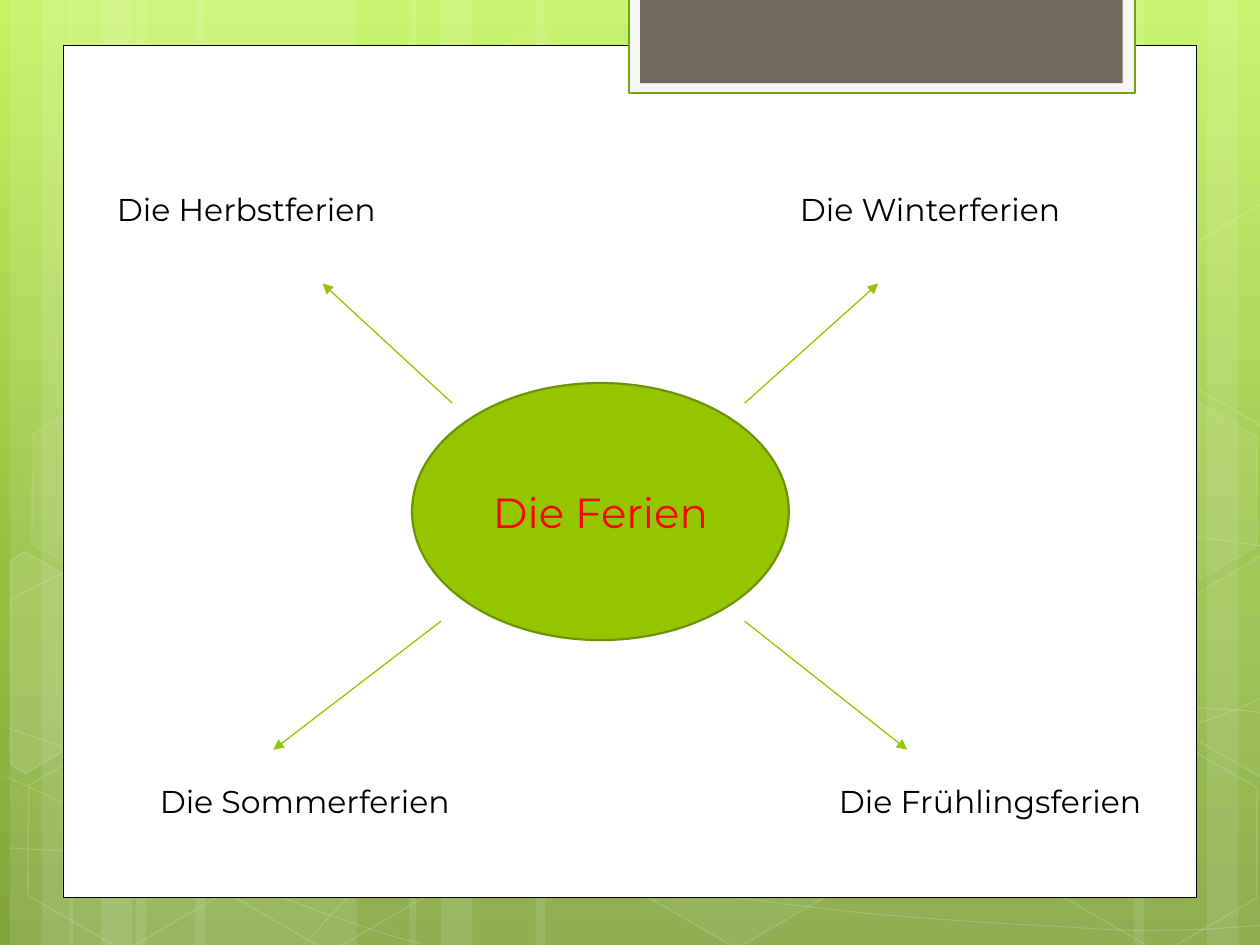
from copy import deepcopy
from pptx import Presentation
from pptx.dml.color import RGBColor
from pptx.enum.shapes import MSO_CONNECTOR, MSO_SHAPE
from pptx.enum.text import MSO_ANCHOR, MSO_AUTO_SIZE, PP_ALIGN
from pptx.oxml.ns import qn
from pptx.util import Inches, Pt
from lxml.etree import SubElement

WIDE, HIGH = Inches(10), Inches(7.5)
COL, ROW = WIDE / 10, HIGH / 7.5
FONT, GREEN, WHITE = "Montserrat", "94C600", "FFFFFF"

SKY = [("C3F35F", 0), ("93BF3F", 62), ("81A53E", 100)]
BANDS = [(1.08, 1.75), (0.08, 0.5), (0.33, 0.83), (1.55, 1.75), (0.55, 0.5),
         (0.8, 0.83), (7.33, 1.75), (9.58, 0.5), (9, 0.83), (4.25, 3.08),
         (3.25, 0.5), (3.5, 0.83)]
CURVES = [
    [(0.07, 6.73), (0.61, 6.76), (1.15, 6.79), (1.9, 6.78), (2.65, 6.77),
     (3.58, 6.75), (4.58, 6.65), (5.58, 6.55), (7, 6.36), (7.92, 6.17),
     (8.83, 5.98), (9.77, 5.68), (10.07, 5.51)],
    [(0.07, 4.77), (0.36, 4.61), (0.65, 4.46), (1.21, 4.31), (1.78, 4.16),
     (2.59, 3.94), (3.47, 3.87), (4.36, 3.8), (5.44, 3.79), (6.54, 3.87),
     (7.64, 3.95), (9.47, 4.26), (10.07, 4.34)],
    [(0.06, 6.17), (1.27, 6.72), (2.47, 7.27), (3.34, 7.49)],
    [(0.07, 5.78), (0.38, 5.89), (0.7, 6), (1.28, 6.16), (1.86, 6.31),
     (2.73, 6.56), (3.57, 6.73), (4.4, 6.9), (5.45, 7.08), (6.28, 7.18),
     (7.11, 7.29), (8, 7.33), (8.53, 7.36), (9.05, 7.4), (9.19, 7.38),
     (9.45, 7.38), (9.71, 7.37), (9.89, 7.35), (10.07, 7.34)],
    [(2.42, 7.49), (2.6, 7.29), (2.78, 7.09), (3.02, 6.91), (3.26, 6.73),
     (3.6, 6.53), (3.88, 6.39), (4.16, 6.25), (4.33, 6.19), (4.7, 6.09),
     (5.06, 5.99), (5.73, 5.85), (6.08, 5.78), (6.44, 5.71), (6.49, 5.71),
     (6.8, 5.69), (7.11, 5.66), (7.6, 5.63), (7.94, 5.62), (8.29, 5.61),
     (8.86, 5.62), (8.86, 5.62), (9.08, 5.62), (9.31, 5.62), (9.53, 5.62),
     (9.71, 5.63), (9.88, 5.64), (9.97, 5.65), (10.06, 5.66), (10.03, 5.65),
     (10.06, 5.66)],
]
CELLS = [(3.34, 0.36, 4, 8), (4.97, 5.89, 6, 12), (0.11, 5.91, 0, 12),
         (0.14, 3.12, 7, 8), (1.74, 5.92, 0, 12), (7.53, 4.53, 10, 12),
         (8.34, 5.93, 0, 12), (8.34, 3.14, 7, 8)]
LEFT_CUT = [(0, 0.12), (0.06, 0), (0.94, 0), (1.38, 0.76), (0.95, 1.52), (0.81, 1.52)]
RIGHT_CUT = [(0, 0.75), (0.42, 0), (0.52, 0), (1.36, 1.45), (1.31, 1.52), (0.43, 1.52)]
PARTS = [(-0.33, 4.59, LEFT_CUT, 10), (9.17, 4.44, RIGHT_CUT, 4),
         (9.17, 1.65, RIGHT_CUT, 0)]
PANELS = [((0.5, 0.36, 9, 6.76), WHITE, "000000", 0.5),
          ((4.99, -0.02, 4.02, 0.76), "F5F5F5", "74A510", 1.25),
          ((5.08, -0.02, 3.83, 0.68), "71685A", None, 0)]
HUB = ("Die Ferien", (3.27, 3.04, 2.99, 2.04))
TERMS = [("Die Winterferien", (6.25, 1.46, 2.6, 0.4), True, (5.91, 3.2), (6.97, 2.25)),
         ("Die Herbstferien", (0.83, 1.46, 2.6, 0.4), True, (3.59, 3.2), (2.56, 2.25)),
         ("Die Frühlingsferien", (6.56, 6.16, 2.81, 0.4), False, (5.91, 4.93), (7.2, 5.95)),
         ("Die Sommerferien", (1.17, 6.16, 2.67, 0.4), False, (3.5, 4.93), (2.17, 5.95))]


def rgb(code):
    return RGBColor.from_string(code)


def grid(spot):
    return [round(n * (ROW if i % 2 else COL)) for i, n in enumerate(spot)]


def fade(part, share):
    for tint in part.iter(qn("a:srgbClr")):
        SubElement(tint, qn("a:alpha"), val=str(share * 1000))


def paint(shape, fill=None, line=None, width=1, veil=100, glow=100):
    shape.shadow.inherit = False
    if fill and veil:
        shape.fill.solid()
        shape.fill.fore_color.rgb = rgb(fill)
        if veil < 100:
            fade(shape._element.spPr.find(qn("a:solidFill")), veil)
    else:
        shape.fill.background()
    if line:
        shape.line.color.rgb = rgb(line)
        shape.line.width = Pt(width)
        if glow < 100:
            fade(shape._element.spPr.find(qn("a:ln")), glow)
    else:
        shape.line.fill.background()


def add(slide, kind, spot, **look):
    shape = slide.shapes.add_shape(kind, *grid(spot))
    paint(shape, **look)
    return shape


def trace(slide, dots, close, **look):
    dots = [grid(dot) for dot in dots]
    pen = slide.shapes.build_freeform(*dots[0])
    pen.add_line_segments(dots[1:], close=close)
    shape = pen.convert_to_shape()
    paint(shape, **look)
    return shape


def bend(shape):
    route = next(shape._element.iter(qn("a:path")))
    legs = route.findall(qn("a:lnTo"))
    for i in range(0, len(legs), 3):
        curve = SubElement(route, qn("a:cubicBezTo"))
        for leg in legs[i:i + 3]:
            curve.append(leg[0])
            route.remove(leg)


def write(shape, text, size, color, align):
    para = shape.text_frame.paragraphs[0]
    para.alignment = align
    run = para.add_run()
    run.text = text
    run.font.size, run.font.name = Pt(size), FONT
    run.font.color.rgb = rgb(color)


def arrow(slide, start, tip):
    line = slide.shapes.add_connector(MSO_CONNECTOR.STRAIGHT, *grid(start), *grid(tip))
    line.line.color.rgb = rgb(GREEN)
    line.line.width = Pt(0.75)
    prop = line._element.spPr
    SubElement(prop.find(qn("a:ln")), qn("a:tailEnd"), type="triangle")
    SubElement(prop, qn("a:effectLst"))


def backdrop(slide):
    fill = slide.background.fill
    fill.gradient()
    fill.gradient_angle = 270
    stops = next(slide._element.iter(qn("a:gsLst")))
    stops.append(deepcopy(stops[0]))
    for stop, (code, place) in zip(fill.gradient_stops, SKY):
        stop.color.rgb = rgb(code)
        stop.position = place / 100
    for left, width in BANDS:
        add(slide, MSO_SHAPE.RECTANGLE, (left, 0, width, 7.5), fill=WHITE, veil=10)
    for knots in CURVES:
        bend(trace(slide, knots, False, line=WHITE, width=0.5, glow=20))
    for left, top, veil, glow in CELLS:
        cell = add(slide, MSO_SHAPE.HEXAGON, (left, top, 1.75, 1.52),
                   fill=WHITE, line=WHITE, veil=veil, glow=glow)
        cell.adjustments[0], cell.adjustments[1] = 0.285, 1.155
        cell.rotation = 30
    for left, top, cut, veil in PARTS:
        dots = [(left + x, top + y) for x, y in cut]
        part = trace(slide, dots, True, fill=WHITE, line=WHITE, veil=veil, glow=12)
        part.rotation = 30
    for spot, fill, line, width in PANELS:
        add(slide, MSO_SHAPE.RECTANGLE, spot, fill=fill, line=line, width=width)


def main():
    """Build the mind map of school holidays."""
    deck = Presentation()
    deck.slide_width, deck.slide_height = WIDE, HIGH
    slide = deck.slides.add_slide(deck.slide_layouts[6])
    backdrop(slide)
    text, spot = HUB
    hub = add(slide, MSO_SHAPE.OVAL, spot, fill=GREEN, line="6D9200", width=1.25)
    hub.text_frame.vertical_anchor = MSO_ANCHOR.MIDDLE
    write(hub, text, 24, "FF0000", PP_ALIGN.CENTER)
    for text, spot, wrap, start, tip in TERMS:
        arrow(slide, start, tip)
        box = slide.shapes.add_textbox(*grid(spot))
        box.text_frame.word_wrap = wrap
        box.text_frame.auto_size = MSO_AUTO_SIZE.SHAPE_TO_FIT_TEXT
        write(box, text, 18, "000000", PP_ALIGN.LEFT)
    deck.save("out.pptx")


if __name__ == "__main__":
    main()
